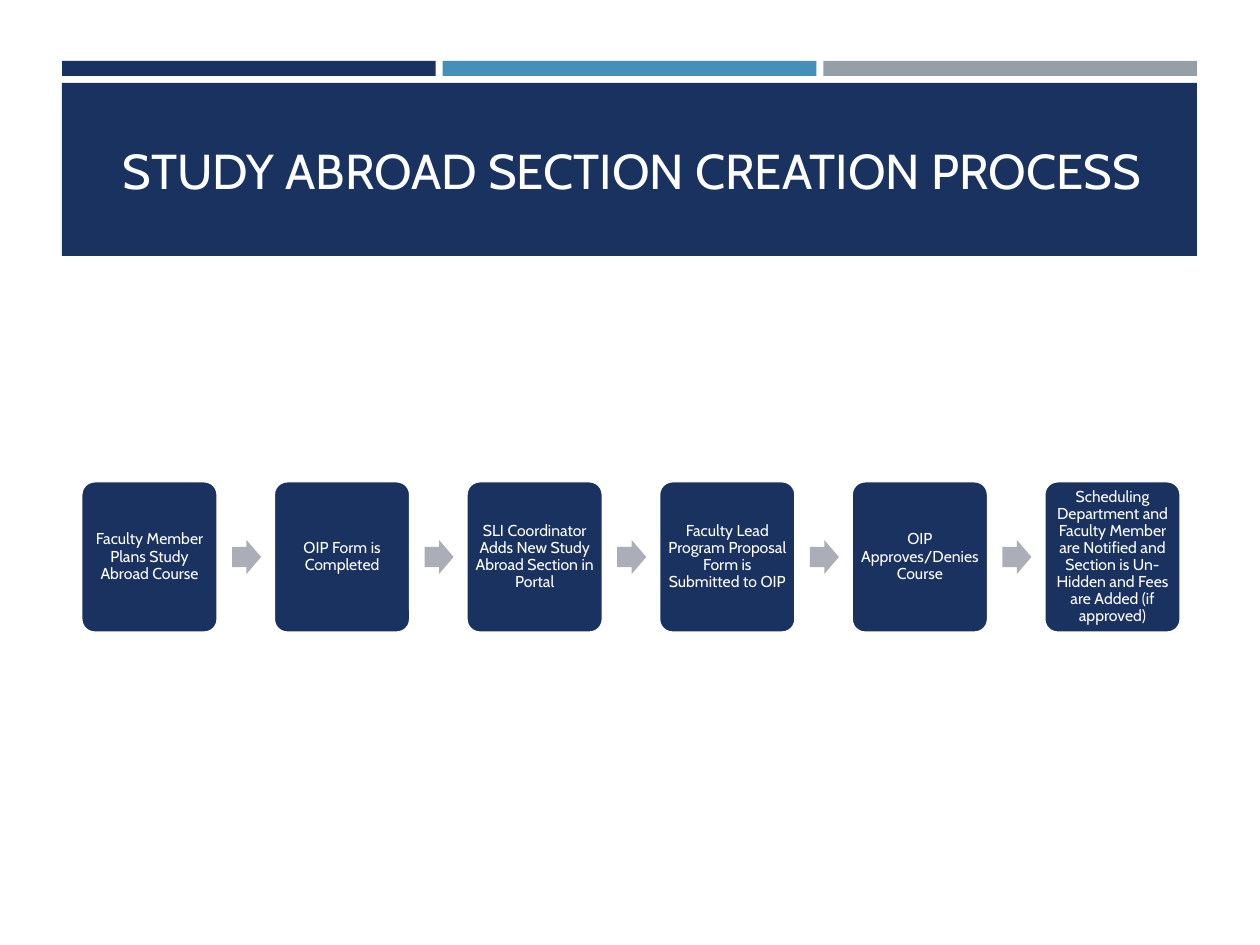
import pptx
import pptx.util
import pptx.dml.color
import pptx.enum.shapes
import pptx.enum.text

SCALE = 914400 / 126
COLORS = {"navy": "1A3260", "blue": "4590B8", "gray": "969FA7", "arrow": "ACAEB7", "white": "FFFFFF"}
SHAPES = pptx.enum.shapes.MSO_SHAPE
STEPS = [
    "Faculty Member Plans Study Abroad Course",
    "OIP Form is Completed",
    "SLI Coordinator Adds New Study Abroad Section in Portal",
    "Faculty Lead Program Proposal Form is Submitted to OIP",
    "OIP Approves/Denies Course",
    "Scheduling Department and Faculty Member are Notified and Section is Un-Hidden "
    "and Fees are Added (if approved)",
]


def px(length):
    return pptx.util.Emu(round(length * SCALE))


def rgb(name):
    return pptx.dml.color.RGBColor.from_string(COLORS[name])


def set_values(target, values):
    for name, value in values.items():
        setattr(target, name, value)


def add_shape(slide, kind, box, color, adjustments=()):
    shape = slide.shapes.add_shape(kind, *map(px, box))
    shape.shadow.inherit = False
    shape.fill.solid()
    shape.fill.fore_color.rgb = rgb(color)
    shape.line.fill.background()
    for index, value in enumerate(adjustments):
        shape.adjustments[index] = value
    return shape


def write_text(shape, text, size, inset_x, inset_y, line_spacing):
    frame = shape.text_frame
    frame.text = text
    set_values(frame, {
        "word_wrap": True,
        "auto_size": pptx.enum.text.MSO_AUTO_SIZE.NONE,
        "vertical_anchor": pptx.enum.text.MSO_ANCHOR.MIDDLE,
        "margin_left": px(inset_x), "margin_right": px(inset_x),
        "margin_top": px(inset_y), "margin_bottom": px(inset_y),
    })
    paragraph = frame.paragraphs[0]
    set_values(paragraph, {"alignment": pptx.enum.text.PP_ALIGN.CENTER, "line_spacing": line_spacing})
    font = paragraph.runs[0].font
    set_values(font, {"name": "Cabin", "size": pptx.util.Pt(size)})
    font.color.rgb = rgb("white")


def add_header(slide, left, top, width, height):
    gap, bar_height = 7, 15
    bar_colors = ["navy", "blue", "gray"]
    bar_width = (width - gap * (len(bar_colors) - 1)) / len(bar_colors)
    for index, color in enumerate(bar_colors):
        bar_left = left + index * (bar_width + gap)
        add_shape(slide, SHAPES.RECTANGLE, (bar_left, top, bar_width, bar_height), color)

    banner_offset = bar_height + gap
    banner = add_shape(slide, SHAPES.RECTANGLE,
                       (left, top + banner_offset, width, height - banner_offset), "navy")
    title = slide.shapes.title
    set_values(title, {"left": px(left + 19), "top": px(top + 34),
                       "width": px(width - 34), "height": px(149)})
    write_text(title, "STUDY ABROAD SECTION CREATION PROCESS", 28, 12, 6, 1.0)
    banner.element.addnext(title.element)


def add_process(slide, left, top, width, height):
    card_width, arrow_width, arrow_height, arrow_gap = 137, 29, 34, 14
    pitch = (width - card_width) / (len(STEPS) - 1)
    arrow_top = top + (height - arrow_height) / 2
    for index, step in enumerate(STEPS):
        card_left = left + index * pitch
        card = add_shape(slide, SHAPES.ROUNDED_RECTANGLE,
                         (card_left, top, card_width, height), "navy", [0.1])
        card.line.color.rgb = rgb("white")
        card.line.width = pptx.util.Pt(1.75)
        write_text(card, step, 9, 4, 4, 0.9)
        if index < len(STEPS) - 1:
            arrow_left = card_left + card_width + arrow_gap
            add_shape(slide, SHAPES.RIGHT_ARROW,
                      (arrow_left, arrow_top, arrow_width, arrow_height), "arrow", [0.6, 0.5])


def main():
    presentation = pptx.Presentation()
    set_values(presentation, {"slide_width": px(1260), "slide_height": px(945)})
    slide = presentation.slides.add_slide(presentation.slide_layouts[5])
    add_header(slide, 62, 61, 1135, 195)
    add_process(slide, 81, 481, 1100, 152)
    presentation.save("out.pptx")


if __name__ == "__main__":
    main()
